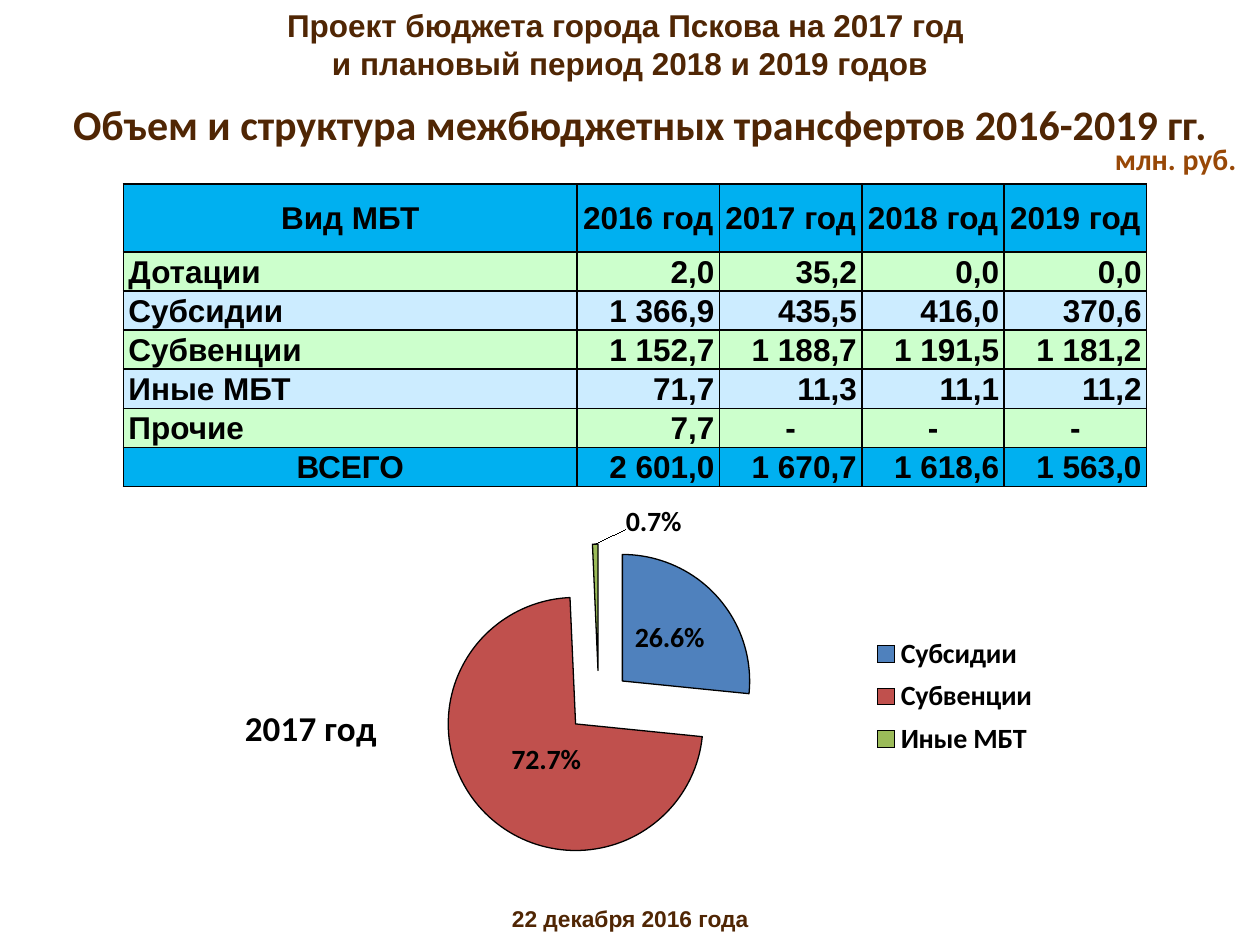
from pptx import Presentation
from pptx.chart.data import CategoryChartData
from pptx.dml.color import RGBColor
from pptx.enum.chart import XL_CHART_TYPE, XL_LABEL_POSITION, XL_LEGEND_POSITION
from pptx.enum.text import MSO_ANCHOR, MSO_AUTO_SIZE, PP_ALIGN
from pptx.oxml import parse_xml
from pptx.oxml.ns import nsdecls
from pptx.util import Inches, Pt

# Content
BANNER = "Проект бюджета города Пскова на 2017 год \vи плановый период 2018 и 2019 годов"
HEADING = "Объем и структура межбюджетных трансфертов 2016-2019 гг."
UNITS = "млн. руб."
DATE = "22 декабря 2016 года"
TABLE = [
    ("Вид МБТ", "2016 год", "2017 год", "2018 год", "2019 год"),
    ("Дотации", "2,0", "35,2", "0,0", "0,0"),
    ("Субсидии", "1 366,9", "435,5", "416,0", "370,6"),
    ("Субвенции", "1 152,7", "1 188,7", "1 191,5", "1 181,2"),
    ("Иные МБТ", "71,7", "11,3", "11,1", "11,2"),
    ("Прочие", "7,7", "-", "-", "-"),
    ("ВСЕГО", "2 601,0", "1 670,7", "1 618,6", "1 563,0"),
]
CHART_TITLE = "2017 год"
# name, share, colour, label position, label offset as a share of the chart
SLICES = [
    ("Субсидии", 26.6, "4F81BD", XL_LABEL_POSITION.CENTER, (0, 0)),
    ("Субвенции", 72.7, "C0504D", XL_LABEL_POSITION.CENTER, (0.02, -0.02)),
    ("Иные МБТ", 0.7, "9BBB59", XL_LABEL_POSITION.OUTSIDE_END, (0.07, -0.02)),
]

BROWN, ORANGE, BLACK = "502604", "984807", "000000"
STRONG, BANDS = "00B0F0", ("CCFFCC", "CCECFF")
COLUMNS = [3.6] + [1.13] * 4
ROWS = [0.54] + [0.31] * (len(TABLE) - 1)


def color(value):
    return RGBColor.from_string(value)


def set_font(font, size, name, value, bold=True):
    font.size, font.name, font.bold = Pt(size), name, bold
    font.color.rgb = color(value)


def write(box, text, place, size, name, value, align=PP_ALIGN.CENTER, wrap=True):
    box.left, box.top, box.width, box.height = map(Inches, place)
    frame = box.text_frame
    frame.text = text
    frame.word_wrap = wrap
    frame.auto_size = MSO_AUTO_SIZE.SHAPE_TO_FIT_TEXT
    frame.vertical_anchor = MSO_ANCHOR.TOP
    paragraph = frame.paragraphs[0]
    paragraph.alignment = align
    for span in paragraph.runs:
        set_font(span.font, size, name, value)


def add_text(page, *args, **options):
    write(page.shapes.add_textbox(0, 0, 0, 0), *args, **options)


def add_borders(cell):
    properties = cell._tc.get_or_add_tcPr()
    for position, side in enumerate(("lnL", "lnR", "lnT", "lnB")):
        properties.insert(position, parse_xml(
            f'<a:{side} {nsdecls("a")} w="12700"><a:solidFill>'
            f'<a:srgbClr val="{BLACK}"/></a:solidFill></a:{side}>'))


def cell_align(row, column):
    edge_row = row in (0, len(TABLE) - 1)
    if row == 0 or TABLE[row][column] == "-" or (edge_row and column == 0):
        return PP_ALIGN.CENTER
    return PP_ALIGN.RIGHT if column else PP_ALIGN.LEFT


def add_budget_table(page):
    table = page.shapes.add_table(
        len(ROWS), len(COLUMNS), Inches(0.98), Inches(1.46),
        Inches(sum(COLUMNS)), Inches(sum(ROWS))).table
    for column, width in zip(table.columns, COLUMNS):
        column.width = Inches(width)
    for r, (values, height) in enumerate(zip(TABLE, ROWS)):
        table.rows[r].height = Inches(height)
        fill = STRONG if r in (0, len(TABLE) - 1) else BANDS[(r - 1) % 2]
        for c, value in enumerate(values):
            cell = table.cell(r, c)
            cell.text = value
            cell.margin_left = cell.margin_right = Inches(0.04)
            cell.margin_top, cell.margin_bottom = Inches(0.01), 0
            cell.vertical_anchor = MSO_ANCHOR.MIDDLE
            cell.fill.solid()
            cell.fill.fore_color.rgb = color(fill)
            paragraph = cell.text_frame.paragraphs[0]
            paragraph.alignment = cell_align(r, c)
            set_font(paragraph.runs[0].font, 18, "Arial", BLACK)
            add_borders(cell)


def manual_layout(x, y, size=None, edge=True, inner=False):
    parts = '<c:layoutTarget val="inner"/>' if inner else ""
    if edge:
        parts += '<c:xMode val="edge"/><c:yMode val="edge"/>'
    parts += f'<c:x val="{x}"/><c:y val="{y}"/>'
    if size:
        parts += f'<c:w val="{size[0]}"/><c:h val="{size[1]}"/>'
    return parse_xml(f'<c:layout {nsdecls("c")}><c:manualLayout>{parts}'
                     '</c:manualLayout></c:layout>')


def place_part(element, after, layout):
    for old in element.findall(layout.tag):
        element.remove(old)
    if after is None:
        element.insert(0, layout)
    else:
        after.addnext(layout)


def style_slices(series):
    series.format.line.color.rgb = color(BLACK)
    series.format.line.width = Pt(0.75)
    series._element.spPr.addnext(
        parse_xml(f'<c:explosion {nsdecls("c")} val="25"/>'))
    labels = series.data_labels
    labels.show_value, labels.show_percentage = False, True
    labels.number_format, labels.number_format_is_linked = "0.0%", False
    set_font(labels.font, 16, "Calibri", BLACK)
    for index, (_, _, fill, position, offset) in enumerate(SLICES):
        point = series.points[index]
        point.format.fill.solid()
        point.format.fill.fore_color.rgb = color(fill)
        point.format.line.color.rgb = color(BLACK)
        point.format.line.width = Pt(0.75)
        set_font(point.data_label.font, 16, "Calibri", BLACK)
        point.data_label.position = position
    # Each label shows its percentage, shifted by its offset
    for label, item in zip(labels._element.xpath("c:dLbl"), SLICES):
        label.xpath("c:showVal")[0].set("val", "0")
        label.xpath("c:showPercent")[0].set("val", "1")
        index = label.xpath("c:idx")[0]
        index.addnext(parse_xml(
            f'<c:numFmt {nsdecls("c")} formatCode="0.0%" sourceLinked="0"/>'))
        if any(item[4]):
            place_part(label, index, manual_layout(*item[4], edge=False))


def add_share_chart(page):
    data = CategoryChartData(number_format="0.0")
    data.categories = [item[0] for item in SLICES]
    data.add_series(CHART_TITLE, [item[1] for item in SLICES])
    chart = page.shapes.add_chart(
        XL_CHART_TYPE.PIE, Inches(1.76), Inches(3.99),
        Inches(6.65), Inches(3), data).chart
    set_font(chart.font, 10, "Calibri", BLACK, bold=False)
    chart.plots[0].vary_by_categories = True

    # Title to the left of the pie
    chart.has_title = True
    title = chart.chart_title
    title.text_frame.text = CHART_TITLE
    set_font(title.text_frame.paragraphs[0].runs[0].font, 20, "Calibri", BLACK)
    place_part(title._element, title._element.xpath("c:tx")[0],
               manual_layout(0.02, 0.51))

    # Legend to the right
    chart.has_legend = True
    legend = chart.legend
    legend.position = XL_LEGEND_POSITION.RIGHT
    legend.include_in_layout = False
    set_font(legend.font, 16, "Calibri", BLACK)
    place_part(legend._element, legend._element.xpath("c:legendPos")[0],
               manual_layout(0.77, 0.33, (0.21, 0.36)))

    plot_area = chart._chartSpace.xpath("c:chart/c:plotArea")[0]
    place_part(plot_area, None,
               manual_layout(0.26, 0.1, (0.38, 0.85), inner=True))
    style_slices(chart.plots[0].series[0])


def main():
    deck = Presentation()
    deck.slide_width, deck.slide_height = Inches(10), Inches(7.5)
    page = deck.slides.add_slide(deck.slide_layouts[5])

    # Headings and date
    write(page.shapes.title, HEADING, (0.44, 0.73, 9.28, 0.51), 24, "Calibri",
          BROWN, wrap=False)
    add_text(page, BANNER, (0, 0, 10, 0.71), 18, "Arial", BROWN)
    add_text(page, DATE, (0, 7.13, 10, 0.32), 13, "Arial", BROWN)
    add_text(page, UNITS, (8.75, 1.07, 1.17, 0.39), 17, "Calibri", ORANGE,
             align=PP_ALIGN.LEFT, wrap=False)

    add_budget_table(page)
    add_share_chart(page)
    deck.save("out.pptx")


if __name__ == "__main__":
    main()
